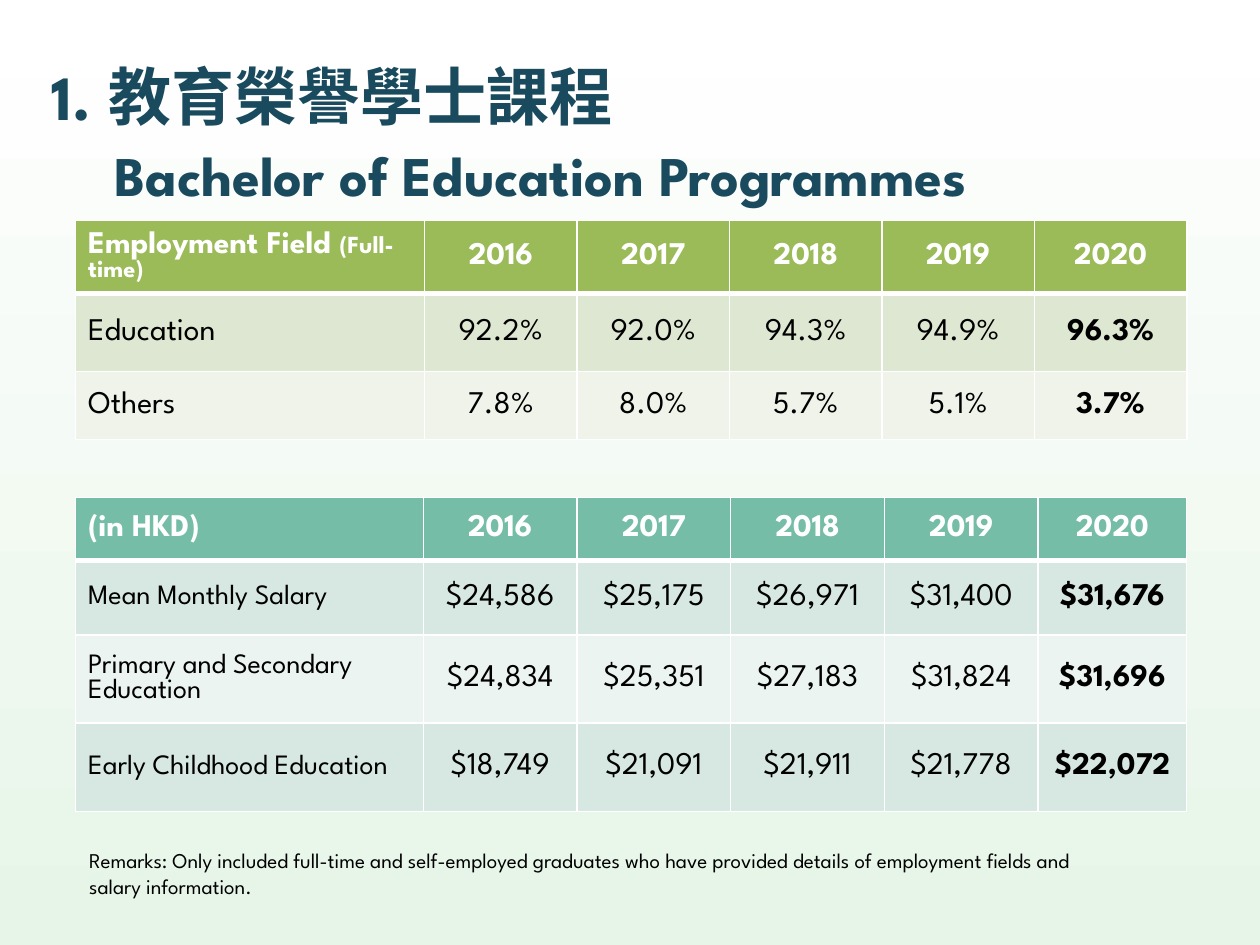
from dataclasses import dataclass

from lxml import etree
from pptx import Presentation
from pptx import util as u
from pptx.dml.color import RGBColor
from pptx.enum import text
from pptx.oxml import ns

WIDTH, HEIGHT = 10, 7.5
YEARS = ["2016", "2017", "2018", "2019", "2020"]


@dataclass(frozen=True)
class Theme:
    font: str = "League Spartan"
    title: str = "1A4A5D"
    ink: str = "000000"
    white: str = "FFFFFF"
    mint: str = "E7F5E8"
    green: tuple = ("9BBB59", "DEE7D1", "EFF3EA")
    teal: tuple = ("75BDA7", "D6E8E1", "ECF4F1")
    title_size: int = 36
    subtitle_size: int = 32
    table_size: int = 18
    label_size: int = 16
    small_size: int = 14
    remark_size: int = 12
    thin: int = 1
    thick: int = 3


THEME = Theme()


def add_span(para, words, size, color=THEME.ink, bold=False):
    span = para.add_run()
    span.text = words
    style = {"name": THEME.font, "size": u.Pt(size), "bold": bold}
    for name, value in style.items():
        setattr(span.font, name, value)
    span.font.color.rgb = RGBColor.from_string(color)


def place(item, box):
    for name, value in zip(("left", "top", "width", "height"), box):
        setattr(item, name, u.Inches(value))


def paint_background(page):
    fill = page.background.fill
    fill.gradient()
    fill.gradient_angle = 270
    for stop, position, color in zip(fill.gradient_stops, (0, 1), (THEME.white, THEME.mint)):
        stop.position = position
        stop.color.rgb = RGBColor.from_string(color)


def add_title(page, box):
    title = page.shapes.title
    place(title, box)
    frame = title.text_frame
    frame.vertical_anchor = text.MSO_ANCHOR.MIDDLE
    frame.auto_size = text.MSO_AUTO_SIZE.NONE
    para = frame.paragraphs[0]
    para.alignment = text.PP_ALIGN.LEFT
    add_span(para, "1. 教育榮譽學士課程", THEME.title_size, THEME.title, True)
    para.add_line_break()
    add_span(para, "\t", THEME.title_size, THEME.title, True)
    add_span(para, "Bachelor of Education Programmes", THEME.subtitle_size, THEME.title, True)
    properties = para._p.get_or_add_pPr()
    stops = etree.SubElement(properties, ns.qn("a:tabLst"))
    etree.SubElement(stops, ns.qn("a:tab"), pos=str(u.Inches(0.5)), algn="l")


def draw_borders(cell, top, bottom):
    properties = cell._tc.get_or_add_tcPr()
    widths = {"lnL": THEME.thin, "lnR": THEME.thin, "lnT": top, "lnB": bottom}
    for index, (side, width) in enumerate(widths.items()):
        line = etree.Element(ns.qn(f"a:{side}"), w=str(u.Pt(width)))
        fill = etree.SubElement(line, ns.qn("a:solidFill"))
        etree.SubElement(fill, ns.qn("a:srgbClr"), val=THEME.white)
        properties.insert(index, line)


def add_year_table(page, box, heights, label_width, year_width, colors, rows, label_size):
    """Rows hold a label, as (words, size) pairs or plain words, and one value a year."""
    last = len(YEARS)
    table = page.shapes.add_table(len(rows), last + 1, *map(u.Inches, box)).table
    widths = [label_width] + [year_width] * (last - 1)
    widths.append(box[2] - sum(widths))
    for column, width in zip(table.columns, widths):
        column.width = u.Inches(width)
    for r, (label, *values) in enumerate(rows):
        table.rows[r].height = u.Inches(heights[r])
        header = r == 0
        fill = colors[0] if header else colors[2 - r % 2]
        if isinstance(label, str):
            label = [(label, THEME.table_size if header else label_size)]
        contents = [label] + [[(value, THEME.table_size)] for value in values]
        for c, spans in enumerate(contents):
            cell = table.cell(r, c)
            cell.vertical_anchor = text.MSO_ANCHOR.MIDDLE
            cell.fill.solid()
            cell.fill.fore_color.rgb = RGBColor.from_string(fill)
            draw_borders(cell, THEME.thick if r == 1 else THEME.thin,
                         THEME.thick if header else THEME.thin)
            para = cell.text_frame.paragraphs[0]
            para.alignment = text.PP_ALIGN.CENTER if c else text.PP_ALIGN.LEFT
            for words, size in spans:
                add_span(para, words, size, THEME.white if header else THEME.ink,
                         header or c == last)


def add_remarks(page, box):
    frame = page.shapes.add_textbox(*map(u.Inches, box)).text_frame
    frame.word_wrap = True
    add_span(frame.paragraphs[0],
             "Remarks: Only included full-time and self-employed graduates who have "
             "provided details of employment fields and salary information.",
             THEME.remark_size)


def main():
    deck = Presentation()
    deck.slide_width, deck.slide_height = u.Inches(WIDTH), u.Inches(HEIGHT)
    page = deck.slides.add_slide(deck.slide_layouts[5])
    left, width = 0.06 * WIDTH, 0.882 * WIDTH

    paint_background(page)
    field_heading = [("Employment Field ", THEME.table_size), ("(Full-time)", THEME.small_size)]
    add_year_table(page, (left, 1.75, width, 1.75), (0.58, 0.62, 0.54), 2.77, 1.21, THEME.green, [
        [field_heading, *YEARS],
        ["Education", "92.2%", "92.0%", "94.3%", "94.9%", "96.3%"],
        ["Others", "7.8%", "8.0%", "5.7%", "5.1%", "3.7%"],
    ], THEME.table_size)
    add_title(page, (0.31, 0.31, 9.45, 0.2 * HEIGHT))
    add_year_table(page, (left, 3.95, width, 2.5), (0.5, 0.59, 0.7, 0.7), 2.76, 1.22, THEME.teal, [
        ["(in HKD)", *YEARS],
        ["Mean Monthly Salary", "$24,586", "$25,175", "$26,971", "$31,400", "$31,676"],
        ["Primary and Secondary Education",
         "$24,834", "$25,351", "$27,183", "$31,824", "$31,696"],
        ["Early Childhood Education", "$18,749", "$21,091", "$21,911", "$21,778", "$22,072"],
    ], THEME.label_size)
    add_remarks(page, (left + 0.01, 6.68, 0.8 * WIDTH, 0.5))
    deck.save("out.pptx")


if __name__ == "__main__":
    main()
